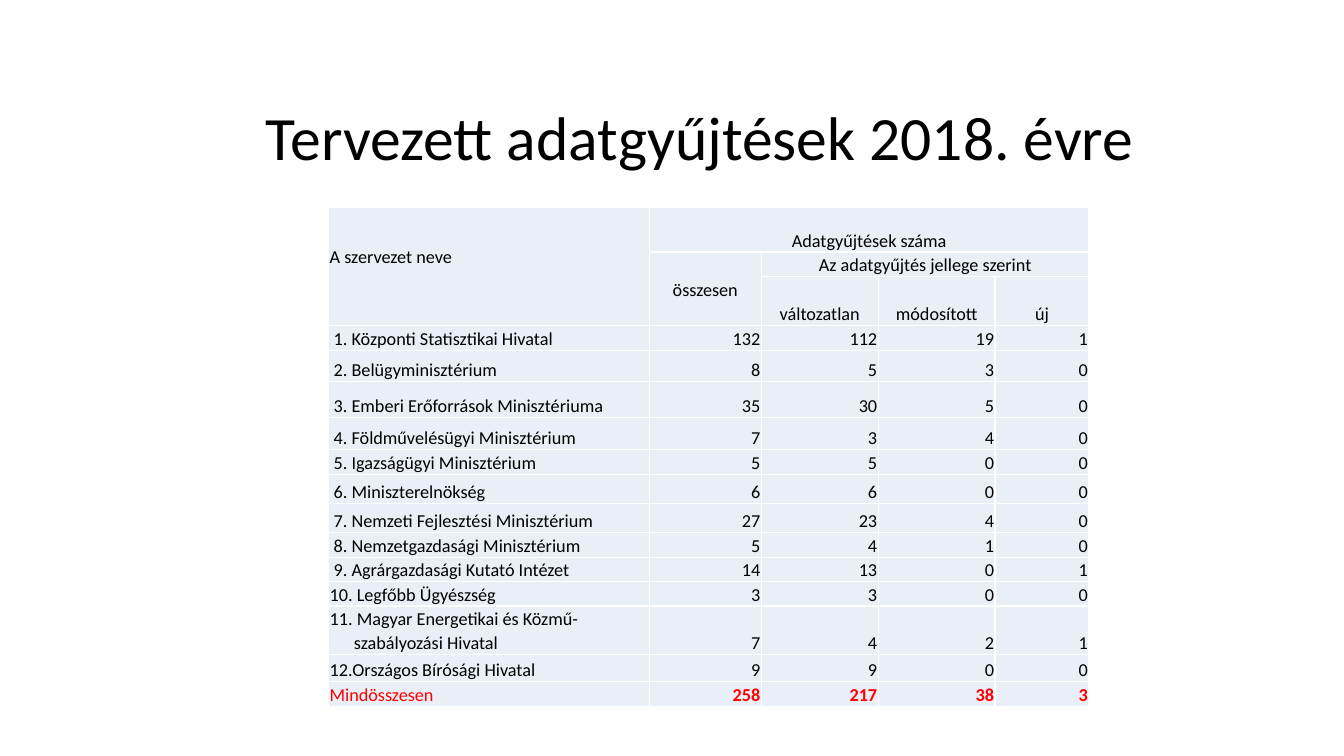
"""Build the slide of data collections planned for 2018."""
from dataclasses import dataclass

from lxml import etree
from pptx import Presentation
from pptx import util as u
from pptx.dml import color
from pptx.enum import text
from pptx.oxml import ns

HUE = {"ink": "000000", "sum": "FF0000", "cell": "EAEFF7", "rule": "FFFFFF"}
LEFT, MID, RIGHT = text.PP_ALIGN.LEFT, text.PP_ALIGN.CENTER, text.PP_ALIGN.RIGHT
LOW, HALF = text.MSO_ANCHOR.BOTTOM, text.MSO_ANCHOR.MIDDLE
COLS = [3.18, 1.11, 1.16, 1.16, 0.93]
TOPS = [0.44, 0.24, 0.49]


@dataclass
class Head:
    row: int
    col: int
    name: str
    down: int = 1
    wide: int = 1
    side: int = MID
    hold: int = LOW
    foot: float = 0


@dataclass
class Body:
    name: str
    nums: tuple[int, ...]
    high: float = 0.24
    dent: float = 0
    hue: str = "ink"
    bold: bool = False


HEADS = [
    Head(0, 0, "A szervezet neve", down=3, side=LEFT, hold=HALF, foot=0.22),
    Head(0, 1, "Adatgyűjtések száma", wide=4),
    Head(1, 1, "összesen", down=2, hold=HALF),
    Head(1, 2, "Az adatgyűjtés jellege szerint", wide=3),
    Head(2, 2, "változatlan"),
    Head(2, 3, "módosított"),
    Head(2, 4, "új"),
]
BODY = [
    Body("1. Központi Statisztikai Hivatal", (132, 112, 19, 1), dent=0.04),
    Body("2. Belügyminisztérium", (8, 5, 3, 0), 0.31, 0.04),
    Body("3. Emberi Erőforrások Minisztériuma", (35, 30, 5, 0), 0.36, 0.04),
    Body("4. Földművelésügyi Minisztérium", (7, 3, 4, 0), 0.32, 0.04),
    Body("5. Igazságügyi Minisztérium", (5, 5, 0, 0), dent=0.04),
    Body("6. Miniszterelnökség", (6, 6, 0, 0), 0.29, 0.04),
    Body("7. Nemzeti Fejlesztési Minisztérium", (27, 23, 4, 0), 0.29, 0.04),
    Body("8. Nemzetgazdasági Minisztérium", (5, 4, 1, 0), dent=0.04),
    Body("9. Agrárgazdasági Kutató Intézet", (14, 13, 0, 1), dent=0.04),
    Body("10. Legfőbb Ügyészség", (3, 3, 0, 0)),
    Body("11. Magyar Energetikai és Közmű-\nszabályozási Hivatal", (7, 4, 2, 1), 0.48),
    Body("12.Országos Bírósági Hivatal", (9, 9, 0, 0), 0.27),
    Body("Mindösszesen", (258, 217, 38, 3), 0.25, hue="sum", bold=True),
]


def put(obj, **form) -> None:
    """Set each attribute in form on obj."""
    for key, val in form.items():
        setattr(obj, key, val)


def style(para, size: float, gap: float, side: int, hue: str = "ink", bold: bool = False) -> None:
    """Format one paragraph and its font."""
    put(para, alignment=side, line_spacing=gap)
    put(para.font, size=u.Pt(size), name="Calibri", bold=bold)
    para.font.color.rgb = color.RGBColor.from_string(HUE[hue])


def frame(cell) -> None:
    """Give a cell its rules, fill and margins."""
    prop = cell._tc.get_or_add_tcPr()
    for edge in ("a:lnL", "a:lnR", "a:lnT", "a:lnB"):
        line = etree.SubElement(prop, ns.qn(edge), w=str(u.Pt(1)))
        fill = etree.SubElement(line, ns.qn("a:solidFill"))
        etree.SubElement(fill, ns.qn("a:srgbClr"), val=HUE["rule"])
    cell.fill.solid()
    cell.fill.fore_color.rgb = color.RGBColor.from_string(HUE["cell"])
    thin = u.Inches(0.01)
    put(cell, margin_left=thin, margin_right=thin, margin_top=thin,
        margin_bottom=0, vertical_anchor=LOW)
    style(cell.text_frame.paragraphs[0], 13, 1.07, LEFT)


def write(cell, name: str, side: int, hue: str = "ink", bold: bool = False, dent: float = 0) -> None:
    """Write text in a cell, with later lines set in."""
    cell.text = name
    for num, para in enumerate(cell.text_frame.paragraphs):
        inset = 0.24 if num else dent
        if inset:
            para._p.get_or_add_pPr().set("marL", str(u.Inches(inset)))
        style(para, 13, 1.07, side, hue, bold)


def title(slide) -> None:
    """Add the slide title."""
    box = slide.shapes.add_textbox(*map(u.Inches, (2.54, 0.93, 9.07, 0.92)))
    put(box.text_frame, word_wrap=True, vertical_anchor=HALF,
        text="Tervezett adatgyűjtések 2018. évre")
    style(box.text_frame.paragraphs[0], 44, 0.9, LEFT)


def table(slide) -> None:
    """Add the table of counts."""
    rows = TOPS + [item.high for item in BODY]
    area = map(u.Inches, (3.26, 2.06, sum(COLS), sum(rows)))
    grid = slide.shapes.add_table(len(rows), len(COLS), *area).table
    for col, wide in zip(grid.columns, COLS):
        col.width = u.Inches(wide)
    for row, high in zip(grid.rows, rows):
        row.height = u.Inches(high)
    for cell in grid.iter_cells():
        frame(cell)
    for head in HEADS:
        cell = grid.cell(head.row, head.col)
        if head.down * head.wide > 1:
            cell.merge(grid.cell(head.row + head.down - 1, head.col + head.wide - 1))
        write(cell, head.name, head.side)
        put(cell, vertical_anchor=head.hold, margin_bottom=u.Inches(head.foot))
    for row, item in enumerate(BODY, len(TOPS)):
        write(grid.cell(row, 0), item.name, LEFT, item.hue, dent=item.dent)
        for col, num in enumerate(item.nums, 1):
            write(grid.cell(row, col), str(num), RIGHT, item.hue, item.bold)


def main() -> None:
    """Make and save the deck."""
    deck = Presentation()
    put(deck, slide_width=u.Inches(13.33), slide_height=u.Inches(7.5))
    slide = deck.slides.add_slide(deck.slide_layouts[6])
    title(slide)
    table(slide)
    deck.save("out.pptx")


if __name__ == "__main__":
    main()
